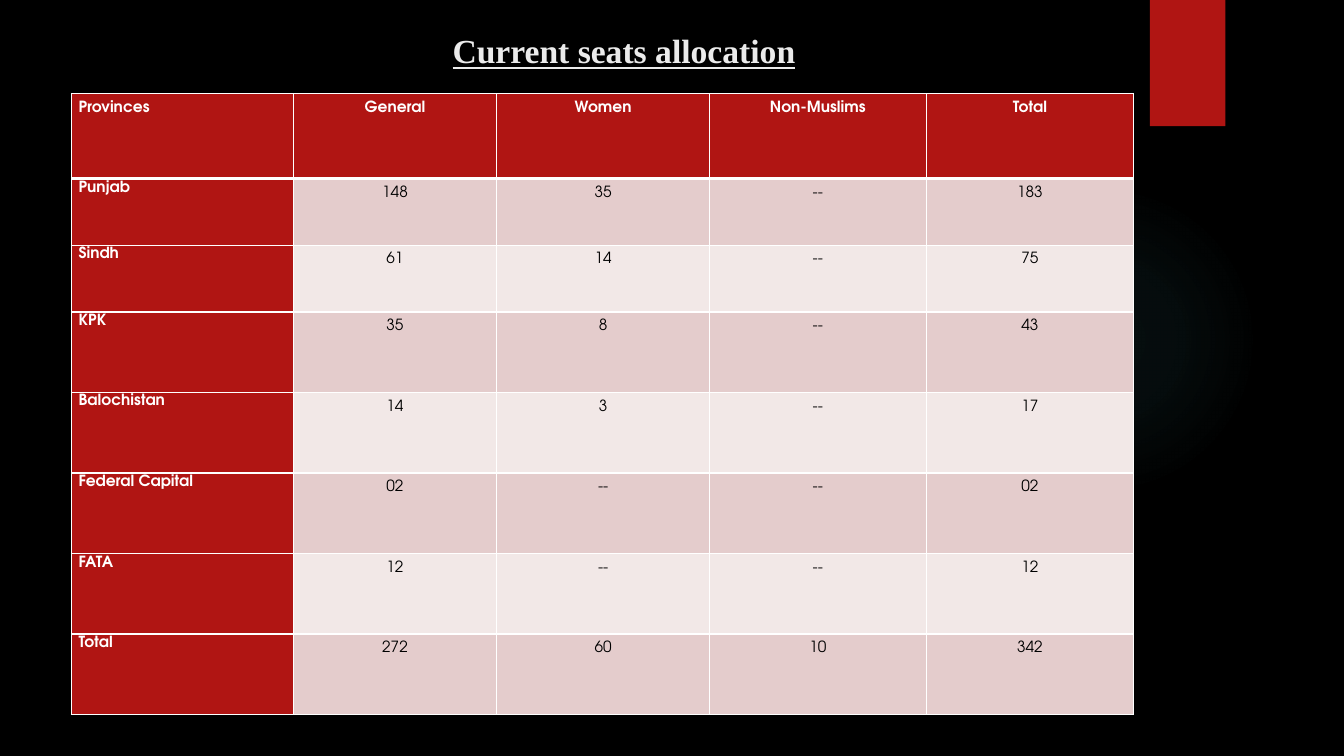
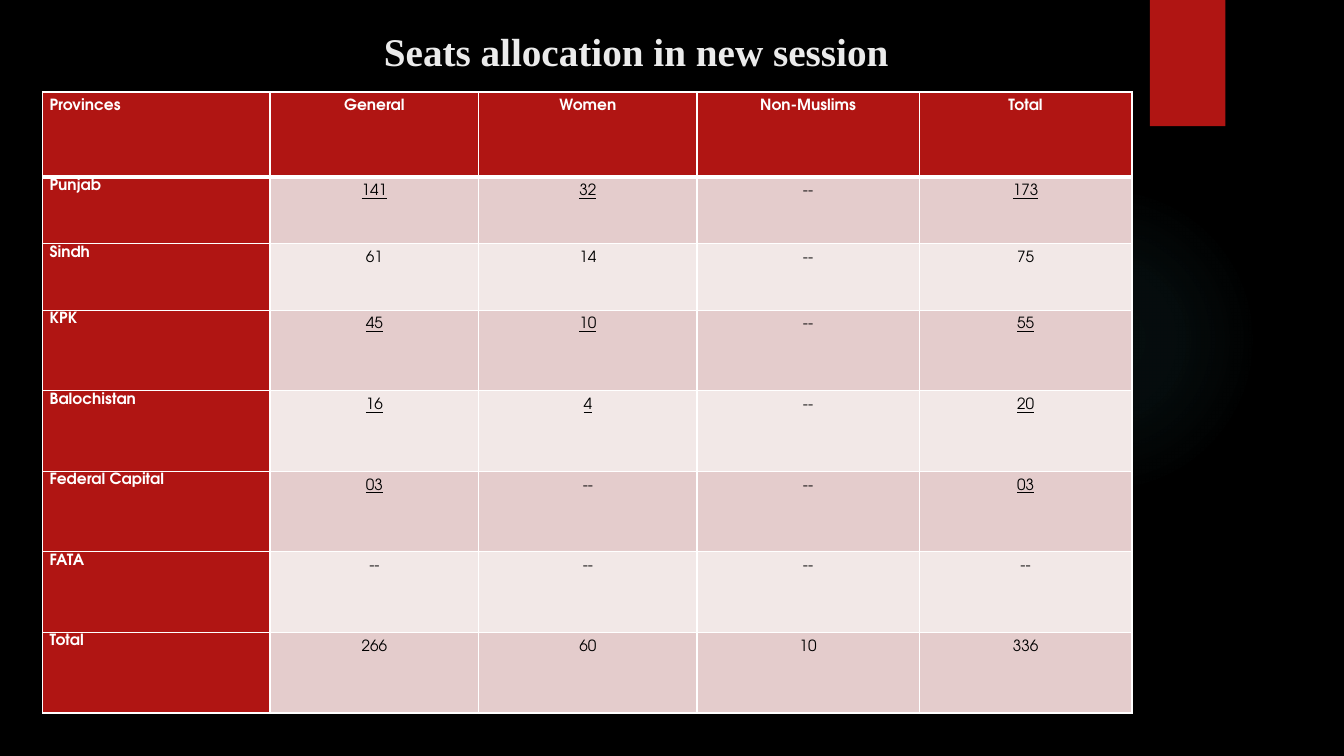
from pptx import Presentation
from pptx.dml.color import RGBColor
from pptx.enum.shapes import MSO_SHAPE
from pptx.enum.text import MSO_ANCHOR, PP_ALIGN
from pptx.oxml import parse_xml
from pptx.oxml.ns import nsdecls, qn
from pptx.util import Cm, Pt

OVAL, RECT = MSO_SHAPE.OVAL, MSO_SHAPE.RECTANGLE
LEFT, CENTER = PP_ALIGN.LEFT, PP_ALIGN.CENTER
MIDDLE, TOP = MSO_ANCHOR.MIDDLE, MSO_ANCHOR.TOP

BLACK, WHITE, TITLE, RED, TEAL = "000000", "FFFFFF", "EBEBEB", "B01513", "50B9C1"
BANDS = ["F2E8E7", "E4CCCC"]
TITLE_FONT, TABLE_FONT = "Times New Roman", "TeX Gyre Adventor"

COLS = [5.59, 5.13, 5.36, 5.46, 5.23]
ROWS = [2.14, 1.68, 1.68] + [2.03] * 5
HEADER = ["Provinces", "General", "Women", "Non-Muslims", "Total"]


def rgb(color):
    return RGBColor.from_string(color)


def add_run(p, text, font, size, color, bold, underline):
    r = p.add_run()
    r.text = text
    r.font.name = font
    r.font.size = Pt(size)
    r.font.color.rgb = rgb(color)
    r.font.bold = bold
    r.font.underline = underline


# Content of each slide; lengths in cm
slides = [
    dict(title="Current seats allocation", size=24, underline=True, indent=9.35,
         left=1.8, top=2.36, width=26.77, underlined=[],
         rows=[["Punjab", "148", "35", "--", "183"],
               ["Sindh", "61", "14", "--", "75"],
               ["KPK", "35", "8", "--", "43"],
               ["Balochistan", "14", "3", "--", "17"],
               ["Federal Capital", "02", "--", "--", "02"],
               ["FATA", "12", "--", "--", "12"],
               ["Total", "272", "60", "10", "342"]]),
    dict(title="Seats allocation in new session", size=28, underline=False, indent=7.62,
         left=1.07, top=2.32, width=27.46,
         underlined=["Punjab", "KPK", "Balochistan", "Federal Capital"],
         rows=[["Punjab", "141", "32", "--", "173"],
               ["Sindh", "61", "14", "--", "75"],
               ["KPK", "45", "10", "--", "55"],
               ["Balochistan", "16", "4", "--", "20"],
               ["Federal Capital", "03", "--", "--", "03"],
               ["FATA", "--", "--", "--", "--"],
               ["Total", "266", "60", "10", "336"]]),
]

prs = Presentation()
prs.slide_width, prs.slide_height = Cm(33.87), Cm(19.05)
layout = prs.slide_layouts[5]

# Shared black background
fill = prs.slide_master.background.fill
fill.solid()
fill.fore_color.rgb = rgb(BLACK)

for number, data in enumerate(slides):
    s = prs.slides.add_slide(layout)

    # Glow and red tab, made once and moved to the layout
    if number == 0:
        glow = s.shapes.add_shape(OVAL, Cm(23.9), Cm(4.65), Cm(7.82), Cm(7.82))
        tab = s.shapes.add_shape(RECT, Cm(28.98), Cm(0), Cm(1.9), Cm(3.18))
        glow.fill.background()
        stops = "".join(
            f'<a:gs pos="{pos}000"><a:srgbClr val="{TEAL}"><a:alpha val="{alpha}000"/></a:srgbClr></a:gs>'
            for pos, alpha in [(0, 7), (36, 6), (69, 0)])
        spPr = glow.element.spPr
        spPr.replace(spPr.find(qn("a:noFill")), parse_xml(
            f'<a:gradFill {nsdecls("a")}><a:gsLst>{stops}</a:gsLst><a:path path="circle">'
            '<a:fillToRect l="50000" t="50000" r="50000" b="50000"/></a:path></a:gradFill>'))
        tab.fill.solid()
        tab.fill.fore_color.rgb = rgb(RED)
        for sp in (glow, tab):
            sp.line.fill.background()
            sp.shadow.inherit = False
            layout.shapes.element.append(sp.element)

    # Title
    sp = s.shapes.title
    sp.left, sp.top, sp.width, sp.height = Cm(1.8), Cm(0.47), Cm(25.9), Cm(1.6)
    tf = sp.text_frame
    tf.word_wrap = True
    tf.vertical_anchor = MIDDLE
    p = tf.paragraphs[0]
    p.alignment = LEFT
    p._p.get_or_add_pPr().set("marL", str(Cm(data["indent"])))
    add_run(p, data["title"], TITLE_FONT, data["size"], TITLE, True, data["underline"])

    # Table grid
    table = s.shapes.add_table(len(ROWS), len(COLS), Cm(data["left"]), Cm(data["top"]),
                               Cm(data["width"]), Cm(sum(ROWS))).table
    for column, width in zip(table.columns, COLS):
        column.width = Cm(width * data["width"] / sum(COLS))
    for row, height in zip(table.rows, ROWS):
        row.height = Cm(height)

    # Cells
    for i, values in enumerate([HEADER] + data["rows"]):
        for j, text in enumerate(values):
            cell = table.cell(i, j)
            heading = i == 0 or j == 0
            cell.margin_left = cell.margin_right = Cm(0.18)
            cell.margin_top = cell.margin_bottom = Cm(0)
            cell.vertical_anchor = TOP

            # White borders, with a heavy rule under the header
            tcPr = cell._tc.get_or_add_tcPr()
            for side in "LRTB":
                weight = 3 if (i, side) in [(0, "B"), (1, "T")] else 1
                tcPr.append(parse_xml(
                    f'<a:ln{side} {nsdecls("a")} w="{Pt(weight)}"><a:solidFill>'
                    f'<a:srgbClr val="{WHITE}"/></a:solidFill></a:ln{side}>'))
            cell.fill.solid()
            cell.fill.fore_color.rgb = rgb(RED if heading else BANDS[i % 2])

            p = cell.text_frame.paragraphs[0]
            p.alignment = CENTER if j else LEFT
            p.line_spacing = 1.15 if i and not j else 1.5
            underline = not heading and values[0] in data["underlined"] and text != "--"
            add_run(p, text, TABLE_FONT, 11, WHITE if heading else BLACK, heading, underline)

prs.save("out.pptx")
